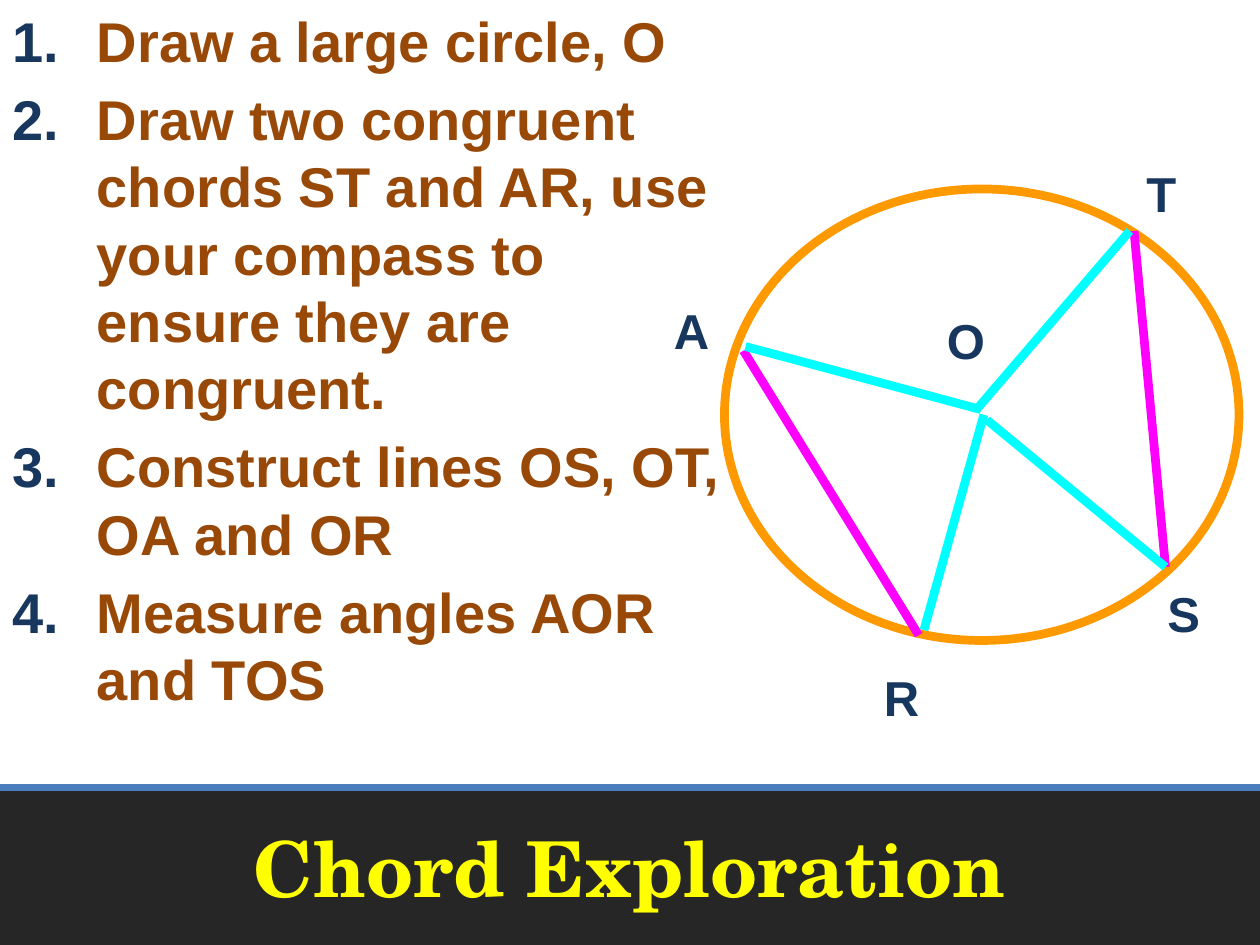
from typing import NamedTuple

from lxml import etree
from pptx import Presentation
from pptx.dml.color import RGBColor
from pptx.enum.shapes import MSO_CONNECTOR, MSO_SHAPE
from pptx.enum.text import MSO_ANCHOR, MSO_AUTO_SIZE, PP_ALIGN
from pptx.oxml.ns import qn
from pptx.util import Inches, Pt

STRAIGHT = MSO_CONNECTOR.STRAIGHT
RECTANGLE, OVAL = MSO_SHAPE.RECTANGLE, MSO_SHAPE.OVAL
MIDDLE, CENTER = MSO_ANCHOR.MIDDLE, PP_ALIGN.CENTER
FIXED, GROW = MSO_AUTO_SIZE.NONE, MSO_AUTO_SIZE.SHAPE_TO_FIT_TEXT

COLUMNS, ROWS = 120, 90
WIDTH, HEIGHT = Inches(10), Inches(7.5)
INDENT = Inches(0.67)
COLORS = {
    "band": "262626", "rule": "4B7EBC", "title": "FFFF00", "step": "984807",
    "navy": "17375E", "circle": "FF9900", "chord": "FF00FF", "radius": "00FFFF",
}


class Area(NamedTuple):
    left: float
    top: float
    width: float
    height: float


class Segment(NamedTuple):
    start: tuple[float, float]
    end: tuple[float, float]
    color: str
    weight: float = 5


class Label(NamedTuple):
    text: str
    left: float
    top: float
    width: float


BAND = Area(0, 75, 120, 15)
TITLE = Area(6, 77, 108, 11)
STEPS_AREA = Area(0, 0, 71, 81)
CIRCLE = Area(69, 18, 49, 43)
RULE = Segment((0, 75), (120, 75), "rule", 4)
SEGMENTS = [
    Segment((108, 22), (111, 54), "chord"),
    Segment((70.8, 33.4), (87.5, 60.5), "chord"),
    Segment((93.7, 39.5), (88, 60), "radius"),
    Segment((93.4, 39), (71, 33), "radius"),
    Segment((107.6, 22), (93, 39), "radius"),
    Segment((111, 54), (94, 40), "radius"),
]
LABELS = [
    Label("A", 63, 28, 5.9),
    Label("R", 83, 63, 5.9),
    Label("T", 108, 15, 5.3),
    Label("S", 110, 55, 5.5),
    Label("O", 89, 29, 6),
]
STEPS = [
    "Draw a large circle, O",
    "Draw two congruent chords ST and AR, use your compass to ensure they are congruent.",
    "Construct lines OS, OT, OA and OR",
    "Measure angles AOR and TOS",
]


def rgb(name: str) -> RGBColor:
    """Look up a named colour."""
    return RGBColor.from_string(COLORS[name])


def across(columns: float) -> int:
    """Turn grid columns into a length."""
    return round(WIDTH * columns / COLUMNS)


def down(rows: float) -> int:
    """Turn grid rows into a length."""
    return round(HEIGHT * rows / ROWS)


def place(area: Area) -> tuple[int, int, int, int]:
    """Turn a grid area into left, top, width and height."""
    return across(area.left), down(area.top), across(area.width), down(area.height)


def write(para, text: str, *, size: float, color: str, font: str = "Arial") -> None:
    """Add a bold span of text to a paragraph."""
    span = para.add_run()
    span.text = text
    span.font.name = font
    span.font.size = Pt(size)
    span.font.bold = True
    span.font.color.rgb = rgb(color)


def number(para) -> None:
    """Give a paragraph a coloured number, a hanging indent and space before."""
    properties = para._p.get_or_add_pPr()
    properties.set("marL", str(INDENT))
    properties.set("indent", str(-INDENT))
    spacing = etree.SubElement(properties, qn("a:spcBef"))
    etree.SubElement(spacing, qn("a:spcPct")).set("val", "20000")
    bullet_color = etree.SubElement(properties, qn("a:buClr"))
    etree.SubElement(bullet_color, qn("a:srgbClr")).set("val", COLORS["navy"])
    etree.SubElement(properties, qn("a:buFont")).set("typeface", "Arial")
    etree.SubElement(properties, qn("a:buAutoNum")).set("type", "arabicPeriod")


def draw_segment(page, segment: Segment) -> None:
    """Draw a straight line without a shadow."""
    (x1, y1), (x2, y2) = segment.start, segment.end
    line = page.shapes.add_connector(STRAIGHT, across(x1), down(y1), across(x2), down(y2))
    line.line.color.rgb = rgb(segment.color)
    line.line.width = Pt(segment.weight)
    etree.SubElement(line._element.spPr, qn("a:effectLst"))


def draw_band(page) -> None:
    """Draw the dark title band with its rule."""
    band = page.shapes.add_shape(RECTANGLE, *place(BAND))
    band.shadow.inherit = False
    band.fill.solid()
    band.fill.fore_color.rgb = rgb("band")
    band.line.fill.background()
    draw_segment(page, RULE)


def draw_title(page, text: str) -> None:
    """Format the title placeholder and bring it above the band."""
    title = page.shapes.title
    title.left, title.top, title.width, title.height = place(TITLE)
    frame = title.text_frame
    frame.auto_size = FIXED
    frame.vertical_anchor = MIDDLE
    para = frame.paragraphs[0]
    para.alignment = CENTER
    write(para, text, size=44, color="title", font="TeX Gyre Schola")
    page.shapes._spTree.append(title._element)


def draw_steps(page, steps: list[str]) -> None:
    """Write the numbered steps."""
    frame = page.shapes.add_textbox(*place(STEPS_AREA)).text_frame
    frame.word_wrap = True
    for index, step in enumerate(steps):
        para = frame.add_paragraph() if index else frame.paragraphs[0]
        number(para)
        write(para, step, size=32, color="step")


def draw_circle(page) -> None:
    """Draw the outline of the circle."""
    circle = page.shapes.add_shape(OVAL, *place(CIRCLE))
    circle.shadow.inherit = False
    circle.fill.background()
    circle.line.color.rgb = rgb("circle")
    circle.line.width = Pt(5)


def draw_label(page, label: Label) -> None:
    """Write the name of a point."""
    area = Area(label.left, label.top, label.width, 6.8)
    frame = page.shapes.add_textbox(*place(area)).text_frame
    frame.word_wrap = False
    frame.auto_size = GROW
    write(frame.paragraphs[0], label.text, size=28, color="navy")


def main() -> None:
    """Build the slide and save it."""
    deck = Presentation()
    deck.slide_width, deck.slide_height = WIDTH, HEIGHT
    page = deck.slides.add_slide(deck.slide_layouts.get_by_name("Title Only"))
    draw_band(page)
    draw_title(page, "Chord Exploration")
    draw_steps(page, STEPS)
    draw_circle(page)
    for segment in SEGMENTS:
        draw_segment(page, segment)
    for label in LABELS:
        draw_label(page, label)
    deck.save("out.pptx")


if __name__ == "__main__":
    main()
